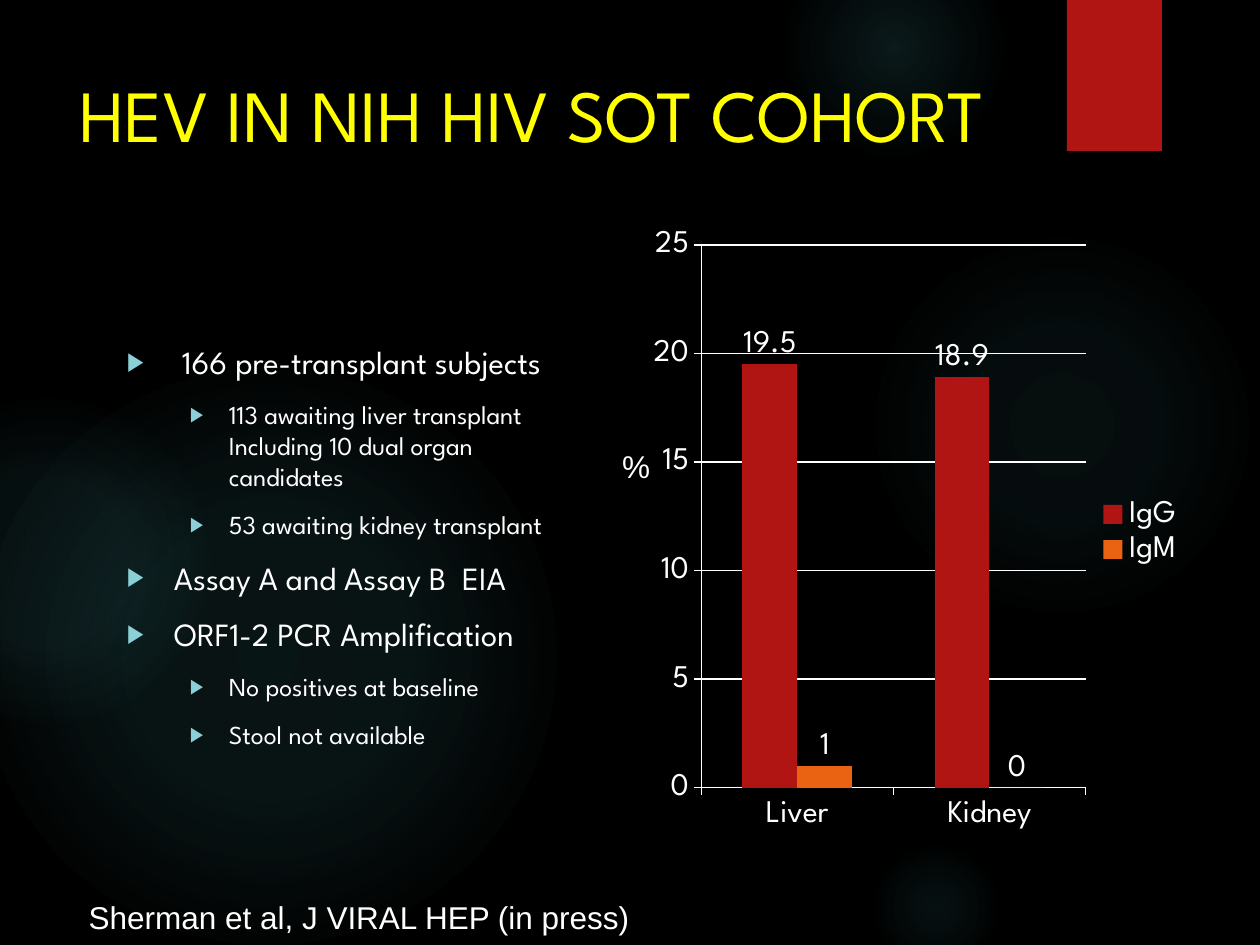
from lxml import etree
from pptx import Presentation
from pptx.chart.data import CategoryChartData
from pptx.dml.color import RGBColor
from pptx.enum.chart import XL_CHART_TYPE, XL_LABEL_POSITION, XL_LEGEND_POSITION, XL_TICK_MARK
from pptx.enum.shapes import MSO_SHAPE
from pptx.enum.text import PP_ALIGN
from pptx.oxml import parse_xml
from pptx.oxml.ns import nsdecls, qn
from pptx.util import Emu, Pt

OVAL, RECTANGLE = MSO_SHAPE.OVAL, MSO_SHAPE.RECTANGLE
LEFT, CENTER = PP_ALIGN.LEFT, PP_ALIGN.CENTER
COLUMNS = XL_CHART_TYPE.COLUMN_CLUSTERED
OUTSIDE_END = XL_LABEL_POSITION.OUTSIDE_END
LEGEND_RIGHT = XL_LEGEND_POSITION.RIGHT
TICK_OUTSIDE = XL_TICK_MARK.OUTSIDE

BLACK = RGBColor(0x00, 0x00, 0x00)
WHITE = RGBColor(0xFF, 0xFF, 0xFF)
YELLOW = RGBColor(0xFF, 0xFF, 0x00)
RED = RGBColor(0xB0, 0x15, 0x13)
ORANGE = RGBColor(0xEA, 0x63, 0x12)
TEAL = RGBColor(0x50, 0xB9, 0xC1)
BULLET = RGBColor(0x8A, 0xD0, 0xD6)

SPARTAN, ARIAL = "League Spartan", "Arial"
EMU_PER_PX = 914400 / 126

GLOWS = [
    (868, 231, 388, [(0, 7), (36, 6), (69, 0)]),
    (784, -63, 220, [(0, 14), (36, 7), (73, 0)]),
    (868, 840, 136, [(0, 9), (36, 5), (66, 0)]),
    (-21, 368, 577, [(0, 11), (36, 10), (75, 0)]),
    (-116, 399, 325, [(0, 8), (36, 8), (72, 0)]),
]
FINDINGS = [
    (0, " 166 pre-transplant subjects"),
    (1, "113 awaiting liver transplant Including 10 dual organ candidates"),
    (1, "53 awaiting kidney transplant"),
    (0, "Assay A and Assay B  EIA"),
    (0, "ORF1-2 PCR Amplification"),
    (1, "No positives at baseline"),
    (1, "Stool not available"),
]
LEVELS = [(18.5, 47, 47), (14.8, 102, 39)]
SERIES = [("IgG", (19.5, 18.9), RED), ("IgM", (1, 0), ORANGE)]


def px(length):
    return Emu(round(length * EMU_PER_PX))


class SlideBuilder:
    """Draws styled elements on the current slide."""

    def __init__(self, slide):
        self.slide = slide
        self.shapes = slide.shapes
        slide.background.fill.solid()
        slide.background.fill.fore_color.rgb = BLACK

    def shape(self, kind, left, top, width, height):
        shape = self.shapes.add_shape(kind, px(left), px(top), px(width), px(height))
        shape.shadow.inherit = False
        shape.line.fill.background()
        return shape

    def block(self, left, top, width, height, color):
        shape = self.shape(RECTANGLE, left, top, width, height)
        shape.fill.solid()
        shape.fill.fore_color.rgb = color

    def glow(self, left, top, size, stops):
        shape = self.shape(OVAL, left, top, size, size)
        stops_xml = "".join(
            f'<a:gs pos="{position * 1000}"><a:srgbClr val="{TEAL}">'
            f'<a:alpha val="{alpha * 1000}"/></a:srgbClr></a:gs>'
            for position, alpha in stops)
        gradient = parse_xml(
            f'<a:gradFill {nsdecls("a")}><a:gsLst>{stops_xml}</a:gsLst><a:path path="circle">'
            '<a:fillToRect l="50000" t="50000" r="50000" b="50000"/></a:path></a:gradFill>')
        shape.element.spPr.find(qn("a:prstGeom")).addnext(gradient)

    def frame(self, left, top, width, height, wrap=True):
        frame = self.shapes.add_textbox(px(left), px(top), px(width), px(height)).text_frame
        frame.word_wrap = wrap
        return frame

    def style(self, font, name, size, color):
        font.name, font.size = name, Pt(size)
        font.color.rgb = color

    def text(self, left, top, width, height, text, font=ARIAL, size=18,
             color=WHITE, align=CENTER, wrap=False):
        paragraph = self.frame(left, top, width, height, wrap).paragraphs[0]
        paragraph.text, paragraph.alignment = text, align
        self.style(paragraph.font, font, size, color)

    def bullets(self, left, top, width, height, items):
        frame = self.frame(left, top, width, height)
        frame.margin_left = frame.margin_right = frame.margin_top = frame.margin_bottom = 0
        for index, (level, text) in enumerate(items):
            paragraph = frame.add_paragraph() if index else frame.paragraphs[0]
            size, margin, hanging = LEVELS[level]
            paragraph.text, paragraph.level = text, level
            paragraph.space_before = Pt(10 if index else 0)
            self.style(paragraph.font, SPARTAN, size, WHITE)
            properties = paragraph._p.get_or_add_pPr()
            properties.set("marL", str(px(margin)))
            properties.set("indent", str(px(-hanging)))
            marks = parse_xml(
                f'<a:pPr {nsdecls("a")}><a:buClr><a:srgbClr val="{BULLET}"/></a:buClr>'
                '<a:buSzPct val="80000"/><a:buFont typeface="Arial"/><a:buChar char="▶"/></a:pPr>')
            spacing = properties.find(qn("a:spcBef"))
            for mark in reversed(list(marks)):
                spacing.addnext(mark)

    def column_chart(self, left, top, width, height, categories, series, plot):
        data = CategoryChartData()
        data.categories = categories
        for name, values, _ in series:
            data.add_series(name, values)
        chart = self.shapes.add_chart(
            COLUMNS, px(left), px(top), px(width), px(height), data).chart
        self.style(chart.font, SPARTAN, 18, WHITE)
        chart.has_title = False
        chart.has_legend = True
        chart.legend.position = LEGEND_RIGHT
        chart.legend.include_in_layout = False
        columns = chart.plots[0]
        columns.gap_width, columns.overlap = 150, 0
        columns.vary_by_categories = False
        columns.has_data_labels = True
        columns.data_labels.show_value = True
        columns.data_labels.position = OUTSIDE_END
        for bars, (_, _, color) in zip(columns.series, series):
            bars.format.fill.solid()
            bars.format.fill.fore_color.rgb = color
        value_axis = chart.value_axis
        value_axis.minimum_scale, value_axis.maximum_scale = 0, 25
        value_axis.major_unit = 5
        for axis in (value_axis, chart.category_axis):
            axis.major_tick_mark = TICK_OUTSIDE
            axis.format.line.color.rgb = WHITE
        value_axis.major_gridlines.format.line.color.rgb = WHITE
        self.place_plot(chart, plot)

    def place_plot(self, chart, plot):
        area = chart.element.find(".//" + qn("c:plotArea"))
        for layout in area.findall(qn("c:layout")):
            area.remove(layout)
        layout = etree.Element(qn("c:layout"))
        manual = etree.SubElement(layout, qn("c:manualLayout"))
        settings = [("layoutTarget", "inner"), ("xMode", "edge"), ("yMode", "edge")]
        for tag, value in settings + list(zip("xywh", plot)):
            etree.SubElement(manual, qn(f"c:{tag}")).set("val", str(value))
        area.insert(0, layout)


def main():
    presentation = Presentation()
    presentation.slide_width, presentation.slide_height = px(1260), px(945)
    builder = SlideBuilder(presentation.slides.add_slide(presentation.slide_layouts[6]))
    for glow in GLOWS:
        builder.glow(*glow)
    builder.block(1067, 0, 95, 151, RED)
    builder.text(67, 63, 973, 193, "HEV IN NIH HIV SOT COHORT", SPARTAN, 42, YELLOW, LEFT, True)
    builder.bullets(127, 342, 430, 520, FINDINGS)
    builder.column_chart(640, 220, 557, 624, ["Liver", "Kidney"], SERIES, (0.11, 0.04, 0.69, 0.87))
    builder.text(609, 441, 54, 50, "%")
    builder.text(73, 892, 572, 50, "Sherman et al, J VIRAL HEP (in press)")
    presentation.save("out.pptx")


if __name__ == "__main__":
    main()
